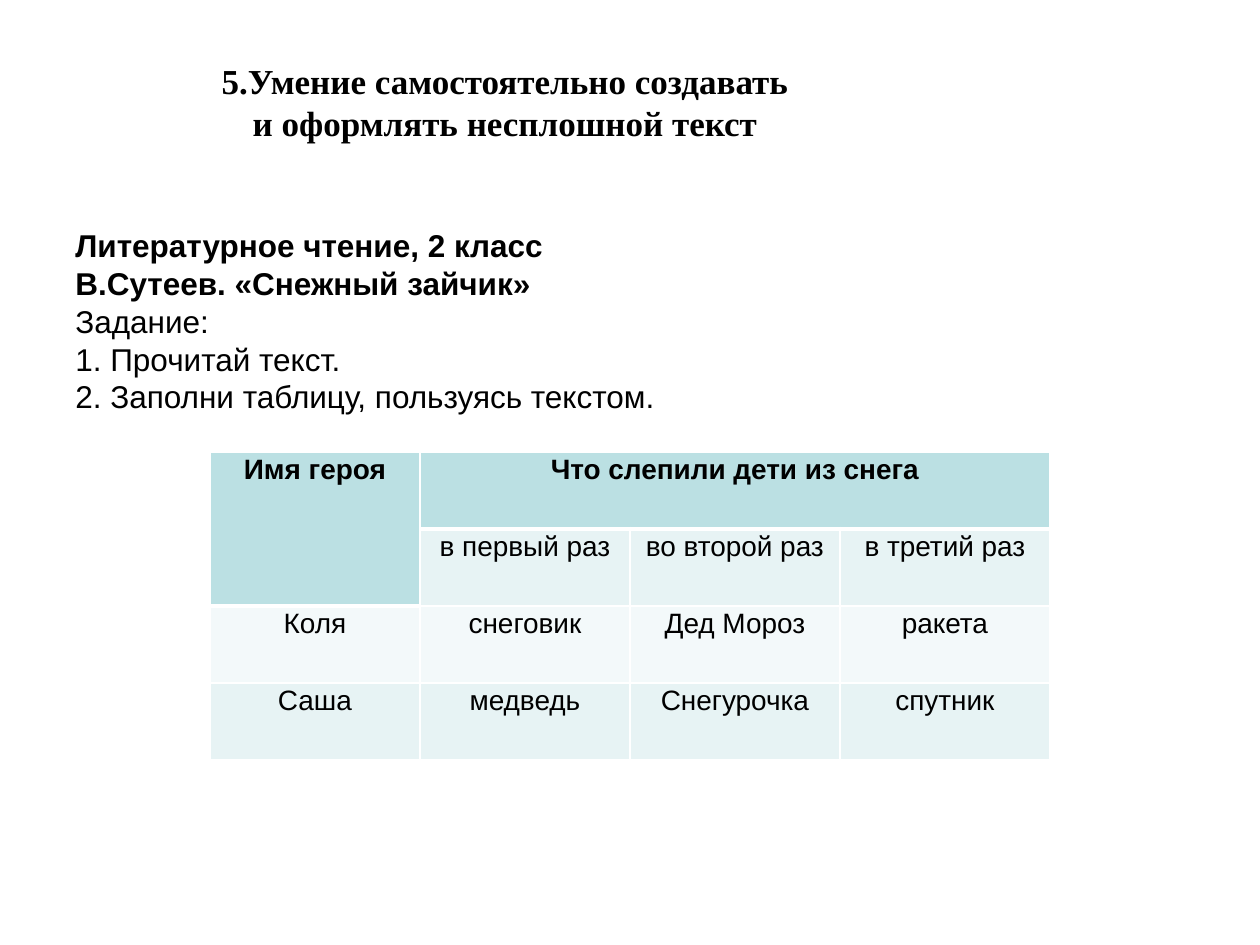
from dataclasses import dataclass

from lxml import etree
from pptx import Presentation
from pptx.dml.color import RGBColor
from pptx.enum.text import MSO_ANCHOR, PP_ALIGN
from pptx.oxml.ns import qn
from pptx.util import Emu, Pt

CENTER, LEFT = PP_ALIGN.CENTER, PP_ALIGN.LEFT
TOP, MIDDLE = MSO_ANCHOR.TOP, MSO_ANCHOR.MIDDLE
EMU_PER_PX = 914400 // 126
TITLE_ONLY = 5


@dataclass(frozen=True)
class Theme:
    ink: str = "000000"
    rule: str = "FFFFFF"
    header: str = "BBE0E3"
    bands: tuple = ("E7F3F4", "F3F9FA")
    title_font: str = "Times New Roman"
    body_font: str = "Arial"
    title_size: int = 20
    body_size: int = 18
    table_size: int = 16
    thin: int = 1
    thick: int = 3


THEME = Theme()
TITLE_LINES = ["5.Умение самостоятельно создавать", "и оформлять несплошной текст"]
TASK = [
    (["Литературное чтение, 2 класс", "В.Сутеев. «Снежный зайчик»"], True),
    (["Задание:"], False),
    (["1. Прочитай текст.", "2. Заполни таблицу, пользуясь текстом."], False),
]
ROWS = [
    ["Имя героя", "Что слепили дети из снега", "", ""],
    ["", "в первый раз", "во второй раз", "в третий раз"],
    ["Коля", "снеговик", "Дед Мороз", "ракета"],
    ["Саша", "медведь", "Снегурочка", "спутник"],
]


def px(length):
    return Emu(length * EMU_PER_PX)


def write_lines(para, lines, font, size, bold, align):
    """Fill one paragraph, with a line break between its lines."""
    para.alignment = align
    para.space_before = Pt(0)
    for index, line in enumerate(lines):
        if index:
            para.add_line_break()
        span = para.add_run()
        span.text = line
        span.font.name = font
        span.font.size = Pt(size)
        span.font.bold = bold
        span.font.color.rgb = RGBColor.from_string(THEME.ink)


def add_title(page, box):
    title = page.shapes.title
    title.left, title.top, title.width, title.height = map(px, box)
    frame = title.text_frame
    frame.word_wrap = True
    frame.vertical_anchor = MIDDLE
    write_lines(frame.paragraphs[0], TITLE_LINES, THEME.title_font,
                THEME.title_size, True, CENTER)


def add_task(page, box):
    frame = page.shapes.add_textbox(*map(px, box)).text_frame
    frame.word_wrap = True
    frame.vertical_anchor = TOP
    for index, (lines, bold) in enumerate(TASK):
        para = frame.add_paragraph() if index else frame.paragraphs[0]
        write_lines(para, lines, THEME.body_font, THEME.body_size, bold, LEFT)


def set_borders(cell, widths):
    """Draw the cell's edges; widths maps an edge (L, R, T, B) to points."""
    properties = cell._tc.get_or_add_tcPr()
    for index, (edge, width) in enumerate(widths.items()):
        line = etree.Element(qn(f"a:ln{edge}"), w=str(Pt(width)))
        fill = etree.SubElement(line, qn("a:solidFill"))
        etree.SubElement(fill, qn("a:srgbClr"), val=THEME.rule)
        properties.insert(index, line)


def add_heroes_table(page, box):
    row_count, column_count = len(ROWS), len(ROWS[0])
    table = page.shapes.add_table(row_count, column_count, *map(px, box)).table
    table.first_row = table.horz_banding = False
    for column in table.columns:
        column.width = px(box[2] // column_count)
    for row in table.rows:
        row.height = px(box[3] // row_count)
    table.cell(0, 0).merge(table.cell(1, 0))
    table.cell(0, 1).merge(table.cell(0, 3))

    for r, texts in enumerate(ROWS):
        for c, text in enumerate(texts):
            cell = table.cell(r, c)
            is_header = r == 0 or (r == 1 and c == 0)
            color = THEME.header if is_header else THEME.bands[(r - 1) % 2]
            cell.fill.solid()
            cell.fill.fore_color.rgb = RGBColor.from_string(color)
            cell.margin_left = cell.margin_right = px(10)
            cell.margin_top = cell.margin_bottom = 0
            cell.vertical_anchor = TOP
            widths = {"L": THEME.thin, "R": THEME.thin}
            if r == 0:
                widths["T"] = THEME.thin
            widths["B"] = THEME.thick if is_header else THEME.thin
            set_borders(cell, widths)
            if text:
                para = cell.text_frame.paragraphs[0]
                para.line_spacing = 1.07
                write_lines(para, [text], THEME.body_font, THEME.table_size,
                            is_header, CENTER)


def main():
    deck = Presentation()
    deck.slide_width, deck.slide_height = px(1260), px(945)
    page = deck.slides.add_slide(deck.slide_layouts[TITLE_ONLY])
    add_title(page, (63, 38, 884, 127))
    add_task(page, (63, 220, 1134, 624))
    add_heroes_table(page, (210, 452, 840, 308))
    deck.save("out.pptx")


if __name__ == "__main__":
    main()
